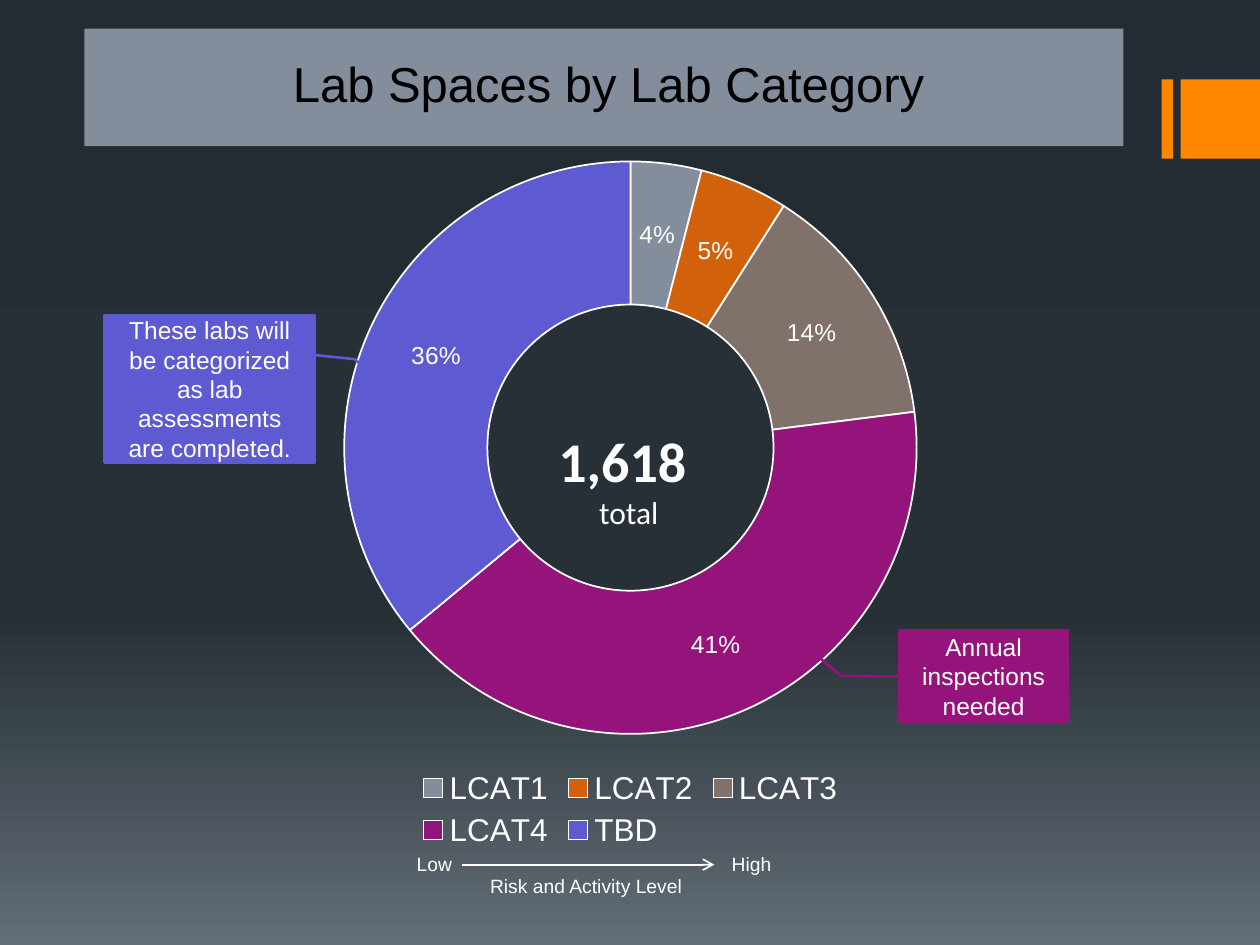
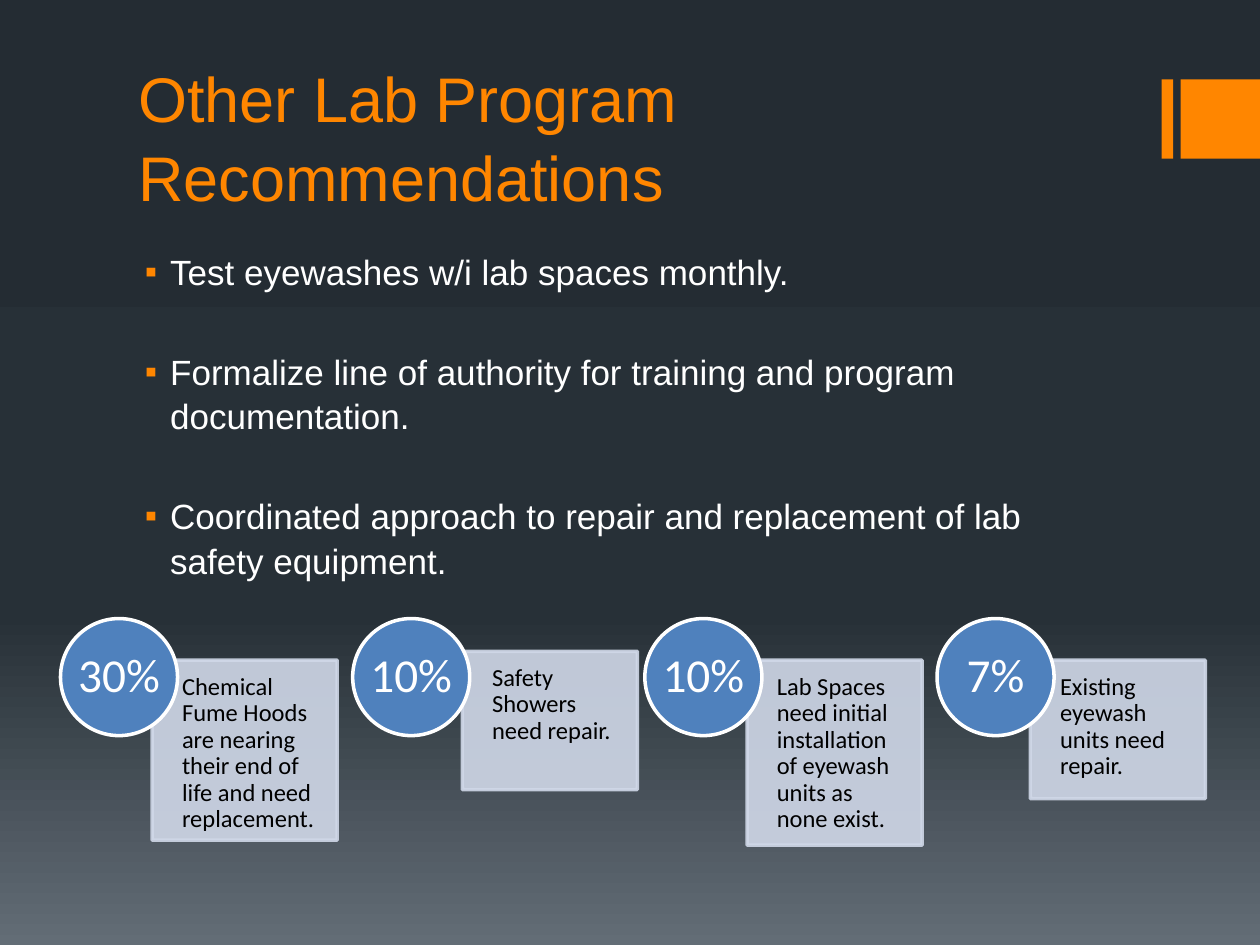
from copy import deepcopy
from dataclasses import dataclass

from lxml.etree import SubElement
from pptx import Presentation
from pptx.chart.data import CategoryChartData
from pptx.dml.color import RGBColor
from pptx.enum.chart import XL_CHART_TYPE, XL_LEGEND_POSITION
from pptx.enum.shapes import MSO_CONNECTOR, MSO_SHAPE
from pptx.enum.text import MSO_ANCHOR, MSO_AUTO_SIZE, PP_ALIGN
from pptx.oxml.ns import qn
from pptx.util import Cm, Pt


@dataclass(frozen=True)
class Theme:
    sans: str = "Arial"
    round: str = "Calibri"
    white: str = "FFFFFF"
    black: str = "000000"
    orange: str = "FF8600"
    slate: str = "838D9B"
    rust: str = "D2610C"
    taupe: str = "80716A"
    plum: str = "94147C"
    violet: str = "5D5AD2"
    blue: str = "4F81BD"
    mist: str = "D0D8E8"
    back: tuple = ((0, "242C33"), (0.65, "273037"), (1, "636D76"))
    head: int = 36
    total: int = 32
    band: int = 28
    badge: int = 27
    body: int = 20
    legend: int = 18
    note: int = 14
    small: int = 11
    chart: int = 10


T = Theme()
SLICES = (
    ("LCAT1", 4, T.slate),
    ("LCAT2", 5, T.rust),
    ("LCAT3", 14, T.taupe),
    ("LCAT4", 41, T.plum),
    ("TBD", 36, T.violet),
)
ADVICE = (
    "Test eyewashes w/i lab spaces monthly.",
    "Formalize line of authority for training and program documentation.",
    "Coordinated approach to repair and replacement of lab safety equipment.",
)
CARDS = (
    ("30%", "Chemical Fume Hoods are nearing their end of life and need replacement.",
     (1.85, 0.84, 3.73, 3.63)),
    ("10%", "Safety Showers need repair.", (2.21, 0.66, 3.53, 2.79)),
    ("10%", "Lab Spaces need initial installation of eyewash units as none exist.",
     (2.06, 0.84, 3.53, 3.73)),
    ("7%", "Existing eyewash units need repair.", (1.88, 0.84, 3.53, 2.79)),
)


def rgb(code):
    return RGBColor.from_string(code)


def apply(item, **vals):
    for name, val in vals.items():
        setattr(item, name, val)


def place(item, box):
    apply(item, **dict(zip(("left", "top", "width", "height"), map(Cm, box))))


def style(font, size, color=T.white, name=T.sans, bold=False):
    apply(font, size=Pt(size), name=name, bold=bold)
    font.color.rgb = rgb(color)


def frame(item, anchor=MSO_ANCHOR.TOP, pads=(0.25, 0.13, 0.25, 0.13)):
    text = item.text_frame
    apply(text, word_wrap=True, auto_size=MSO_AUTO_SIZE.NONE, vertical_anchor=anchor)
    names = ("margin_left", "margin_top", "margin_right", "margin_bottom")
    apply(text, **dict(zip(names, map(Cm, pads))))
    return text


def write(par, words, size, align=PP_ALIGN.LEFT, space=1.0, **look):
    apply(par, alignment=align, line_spacing=space)
    run = par.add_run()
    run.text = words
    style(run.font, size, **look)


def block(host, kind, box, fill, line=None, width=1.5):
    item = host.add_shape(kind, *map(Cm, box))
    item.shadow.inherit = False
    item.fill.solid()
    item.fill.fore_color.rgb = rgb(fill)
    if line:
        item.line.color.rgb = rgb(line)
        item.line.width = Pt(width)
    else:
        item.line.fill.background()
    return item


def label(host, words, box):
    item = host.add_textbox(*map(Cm, box))
    write(frame(item).paragraphs[0], words, T.small)


def backdrop(master):
    fill = master.background.fill
    fill.gradient()
    fill.gradient_angle = 270
    stops = master.element.xpath("./p:cSld/p:bg//a:gs")
    stops[0].addnext(deepcopy(stops[0]))
    for stop, (spot, color) in zip(fill.gradient_stops, T.back):
        stop.position = spot
        stop.color.rgb = rgb(color)


def tabs(slide, master):
    for num, (left, width) in enumerate(((23.42, 0.23), (23.8, 1.6)), 20):
        tab = block(slide.shapes, MSO_SHAPE.RECTANGLE, (left, 1.6, width, 1.6), T.orange)
        tab.element.xpath(".//p:cNvPr")[0].set("id", str(num))
        master.shapes.element.append(tab.element)


def heading(slide, words, box, size, color, align, anchor, pads, space):
    title = slide.shapes.title
    place(title, box)
    write(frame(title, anchor, pads).paragraphs[0], words, size, align, space, color=color)


def ring(slide, box):
    data = CategoryChartData()
    data.categories = [name for name, val, color in SLICES]
    data.add_series("Series 1", [val for name, val, color in SLICES])
    chart = slide.shapes.add_chart(XL_CHART_TYPE.DOUGHNUT, *map(Cm, box), data).chart
    style(chart.font, T.chart)
    apply(chart, has_title=False, has_legend=True)
    apply(chart.legend, position=XL_LEGEND_POSITION.BOTTOM, include_in_layout=False)
    style(chart.legend.font, T.legend)
    plot = chart.plots[0]
    apply(plot, vary_by_categories=True, has_data_labels=True)
    apply(plot.data_labels, show_percentage=True, show_value=False,
          number_format="0%", number_format_is_linked=False)
    style(plot.data_labels.font, T.note)
    for spot, (name, val, color) in enumerate(SLICES):
        form = plot.series[0].points[spot].format
        form.fill.solid()
        form.fill.fore_color.rgb = rgb(color)
        form.line.color.rgb = rgb(T.white)
        form.line.width = Pt(1)
    fit(chart)


def fit(chart):
    area = chart.element.xpath(".//c:plotArea")[0]
    for old in area.findall(qn("c:layout")):
        area.remove(old)
    layout = SubElement(area, qn("c:layout"))
    area.insert(0, layout)
    manual = SubElement(layout, qn("c:manualLayout"))
    rules = dict(layoutTarget="inner", xMode="edge", yMode="edge",
                 x="0.05", y="0.02", w="0.9", h="0.81")
    for name, val in rules.items():
        SubElement(manual, qn("c:" + name)).set("val", val)


def callout(slide, words, box, color, bends):
    item = block(slide.shapes, MSO_SHAPE.LINE_CALLOUT_2, box, color, color)
    for spot, bend in enumerate(bends):
        item.adjustments[spot] = bend
    text = frame(item, MSO_ANCHOR.MIDDLE)
    write(text.paragraphs[0], words, T.note, PP_ALIGN.CENTER)


def scale(slide, left, top):
    host = slide.shapes.add_group_shape().shapes
    mid = top + 0.38
    arrow = host.add_connector(MSO_CONNECTOR.STRAIGHT, Cm(left + 1.17), Cm(mid),
                               Cm(left + 6.25), Cm(mid))
    arrow.line.color.rgb = rgb(T.white)
    arrow.line.width = Pt(1)
    SubElement(arrow.element.xpath(".//a:ln")[0], qn("a:tailEnd")).set("type", "arrow")
    SubElement(arrow.element.spPr, qn("a:effectLst"))
    label(host, "Risk and Activity Level", (left + 1.48, top + 0.45, 4.6, 0.73))
    label(host, "Low", (left, top, 1.5, 0.73))
    label(host, "High", (left + 6.35, top, 1.5, 0.73))


def total(slide, box):
    text = frame(slide.shapes.add_textbox(*map(Cm, box)))
    write(text.paragraphs[0], "1,618 ", T.total, PP_ALIGN.CENTER, name=T.round, bold=True)
    write(text.add_paragraph(), "total", T.legend, PP_ALIGN.CENTER, name=T.round)


def bullets(slide, box):
    body = slide.placeholders[1]
    place(body, box)
    text = frame(body)
    for spot, words in enumerate(ADVICE):
        par = text.add_paragraph() if spot else text.paragraphs[0]
        write(par, words, T.body, space=1.05)
        apply(par, space_before=Pt(0), space_after=Pt(32))
        props = par._p.get_or_add_pPr()
        props.set("marL", str(Cm(0.64)))
        props.set("indent", str(-Cm(0.51)))
        tint = SubElement(props, qn("a:buClr"))
        SubElement(tint, qn("a:srgbClr")).set("val", T.orange)
        SubElement(props, qn("a:buFont")).set("typeface", T.sans)
        SubElement(props, qn("a:buChar")).set("char", "▪")


def card(host, left, top, share, words, box):
    dx, dy, width, height = box
    panel = block(host, MSO_SHAPE.RECTANGLE, (left + dx, top + dy, width, height),
                  T.mist, T.mist, 2)
    for tint in panel.element.xpath("./p:spPr//a:srgbClr"):
        SubElement(tint, qn("a:alpha")).set("val", "90000")
    text = frame(panel, pads=(0.6, 0.28, 0.28, 0.28))
    write(text.paragraphs[0], words, T.note, space=0.9, color=T.black, name=T.round)
    badge = block(host, MSO_SHAPE.OVAL, (left, top, 2.36, 2.36), T.blue, T.white, 2)
    text = frame(badge, MSO_ANCHOR.MIDDLE, (0, 0, 0, 0))
    write(text.paragraphs[0], share, T.badge, PP_ALIGN.CENTER, 0.9, name=T.round)


def cards(slide, left, top, pitch):
    host = slide.shapes.add_group_shape().shapes
    for spot, (share, words, box) in enumerate(CARDS):
        card(host, left + spot * pitch, top, share, words, box)


def spaces(deck):
    slide = deck.slides.add_slide(deck.slide_layouts[5])
    tabs(slide, deck.slide_master)
    band = block(slide.shapes, MSO_SHAPE.RECTANGLE, (1.7, 0.58, 20.95, 2.37), T.slate)
    slide.shapes.element.insert(2, band.element)
    heading(slide, "Lab Spaces by Lab Category", (1.24, 1.07, 22.05, 1.9), T.band,
            T.black, PP_ALIGN.CENTER, MSO_ANCHOR.TOP, (0.25, 0, 0.25, 0), 1.0)
    ring(slide, (6.27, 2.97, 12.88, 14.25))
    callout(slide, "These labs will be categorized as lab assessments are completed.",
            (2.11, 6.35, 4.24, 2.97), T.violet, (0.27, 0.98, 0.3, 1.19, 1.14, 1.79))
    scale(slide, 8.15, 17.05)
    callout(slide, "Annual inspections needed", (18.14, 12.7, 3.38, 1.85), T.plum,
            (0.51, 0.07, 0.5, -0.35, 0.04, -0.65))
    total(slide, (10.87, 8.46, 3.61, 2.44))


def advice(deck):
    slide = deck.slides.add_slide(deck.slide_layouts[1])
    heading(slide, "Other Lab Program Recommendations", (2.54, 1.07, 20.32, 3.38), T.head,
            T.orange, PP_ALIGN.LEFT, MSO_ANCHOR.BOTTOM, (0.25, 0.13, 0.25, 0.13), 1.05)
    bullets(slide, (2.54, 4.88, 20.32, 12.65))
    cards(slide, 1.22, 12.47, 5.89)


def main():
    deck = Presentation()
    apply(deck, slide_width=Cm(25.4), slide_height=Cm(19.05))
    backdrop(deck.slide_master)
    spaces(deck)
    advice(deck)
    deck.save("out.pptx")


if __name__ == "__main__":
    main()
